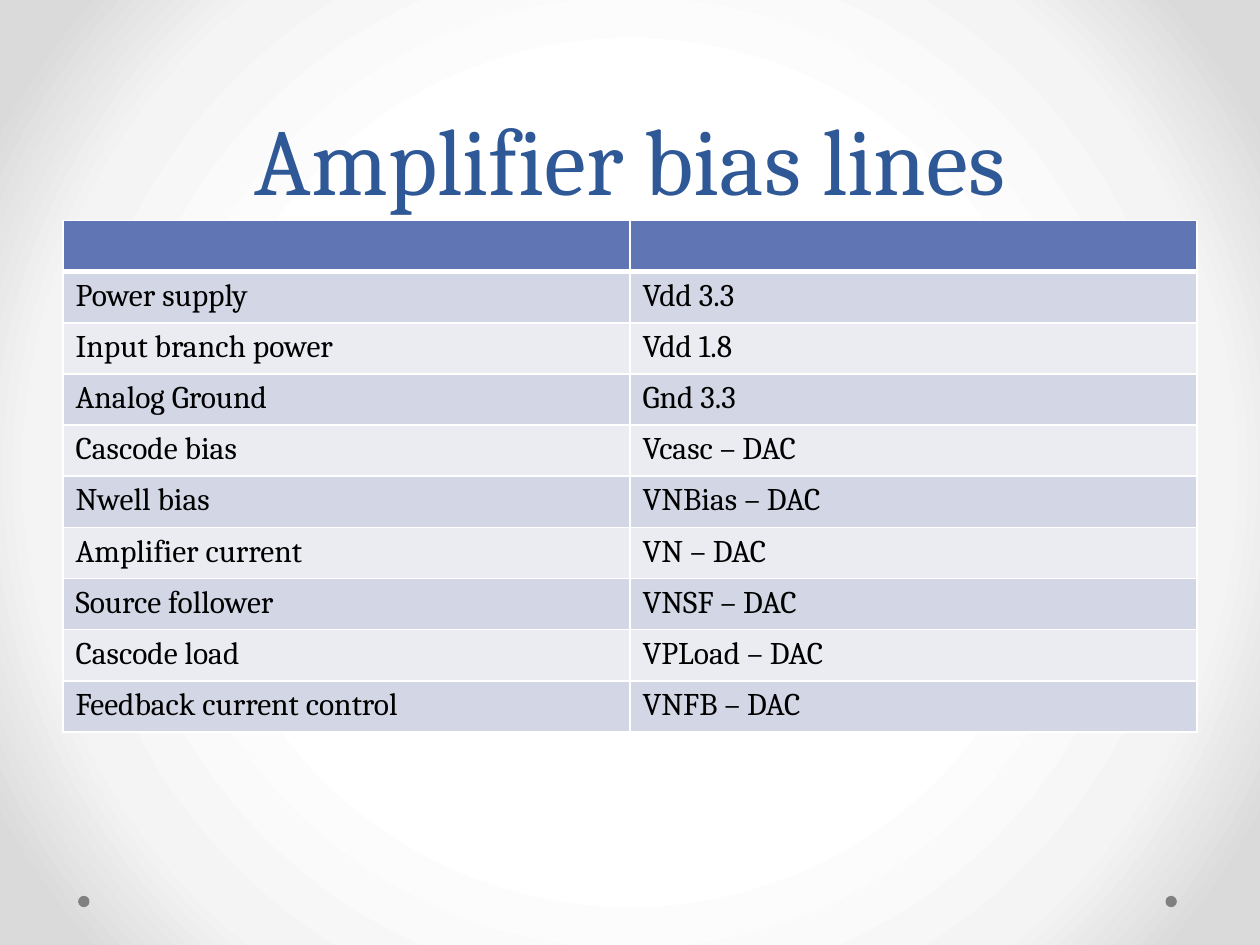
from dataclasses import dataclass

from lxml import etree
from pptx import Presentation
from pptx.dml.color import RGBColor
from pptx.enum.shapes import MSO_SHAPE
from pptx.enum.text import MSO_ANCHOR, PP_ALIGN
from pptx.oxml import parse_xml
from pptx.oxml.ns import nsdecls, qn
from pptx.util import Inches, Pt

DOT = MSO_SHAPE.OVAL
BOTTOM = MSO_ANCHOR.BOTTOM
CENTER = PP_ALIGN.CENTER
TITLE_ONLY = 5


@dataclass(frozen=True)
class Theme:
    font: str = "Cambria"
    title_size: int = 54
    title_leading: int = 58
    body_size: int = 18
    title: str = "2F5897"
    text: str = "000000"
    header: str = "6076B4"
    bands: tuple = ("D2D6E5", "EAECF2")
    rule: str = "FFFFFF"
    dot: str = "808080"
    glow: tuple = ((50, "FFFFFF"), (76, "F4F4F4"), (92, "DADADA"))


def write(frame, text, *, font, size, color, align=None, leading=None):
    paragraph = frame.paragraphs[0]
    paragraph.text = text
    paragraph.alignment = align
    if leading:
        paragraph.line_spacing = Pt(leading)
    paragraph.font.name = font
    paragraph.font.size = Pt(size)
    paragraph.font.color.rgb = RGBColor.from_string(color)


class Deck:
    def __init__(self, theme):
        self.theme = theme
        self.presentation = Presentation()
        self.presentation.slide_width = Inches(10)
        self.presentation.slide_height = Inches(7.5)
        layout = self.presentation.slide_layouts[TITLE_ONLY]
        self.slide = self.presentation.slides.add_slide(layout)

    def place(self, left, top, width, height):
        across = self.presentation.slide_width
        down = self.presentation.slide_height
        return (round(left * across), round(top * down),
                round(width * across), round(height * down))

    def background(self):
        self.slide.background.fill.gradient()
        gradient = self.slide.element.find(".//" + qn("a:gradFill"))
        for part in list(gradient):
            gradient.remove(part)
        stops = etree.SubElement(gradient, qn("a:gsLst"))
        for share, color in self.theme.glow:
            stop = etree.SubElement(stops, qn("a:gs"), pos=str(share * 1000))
            etree.SubElement(stop, qn("a:srgbClr"), val=color)
        circle = etree.SubElement(gradient, qn("a:path"), path="circle")
        etree.SubElement(circle, qn("a:fillToRect"),
                         l="50000", t="50000", r="50000", b="50000")

    def dot(self, left, top, diameter):
        across, down, size, _ = self.place(left, top, diameter, diameter)
        dot = self.slide.shapes.add_shape(DOT, across, down, size, size)
        dot.shadow.inherit = False
        dot.fill.solid()
        dot.fill.fore_color.rgb = RGBColor.from_string(self.theme.dot)
        dot.line.fill.background()

    def title(self, text, *area):
        heading = self.slide.shapes.title
        heading.left, heading.top, heading.width, heading.height = self.place(*area)
        heading.text_frame.vertical_anchor = BOTTOM
        write(heading.text_frame, text, font=self.theme.font,
              size=self.theme.title_size, color=self.theme.title,
              align=CENTER, leading=self.theme.title_leading)

    def border(self, cell, bottom):
        properties = cell._tc.get_or_add_tcPr()
        for side, points in (("L", 1), ("R", 1), ("T", 1), ("B", bottom)):
            properties.append(parse_xml(
                f'<a:ln{side} {nsdecls("a")} w="{Pt(points)}"><a:solidFill>'
                f'<a:srgbClr val="{self.theme.rule}"/></a:solidFill></a:ln{side}>'))

    def table(self, rows, *area):
        left, top, width, height = self.place(*area)
        grid = self.slide.shapes.add_table(
            len(rows), len(rows[0]), left, top, width, height).table
        for r, row in enumerate(rows):
            color = self.theme.bands[(r - 1) % 2] if r else self.theme.header
            for c, text in enumerate(row):
                cell = grid.cell(r, c)
                self.border(cell, bottom=1 if r else 3)
                cell.fill.solid()
                cell.fill.fore_color.rgb = RGBColor.from_string(color)
                write(cell.text_frame, text, font=self.theme.font,
                      size=self.theme.body_size, color=self.theme.text)


BIAS_LINES = [
    ("", ""),
    ("Power supply", "Vdd 3.3"),
    ("Input branch power", "Vdd 1.8"),
    ("Analog Ground", "Gnd 3.3"),
    ("Cascode bias", "Vcasc – DAC"),
    ("Nwell bias", "VNBias – DAC"),
    ("Amplifier current", "VN – DAC"),
    ("Source follower", "VNSF – DAC"),
    ("Cascode load", "VPLoad – DAC"),
    ("Feedback current control", "VNFB – DAC"),
]


def main():
    deck = Deck(Theme())
    deck.background()
    margin, title_height = 0.05, 1.75 / 7.5
    for left in (0.925, 0.062):
        deck.dot(left, 7.11 / 7.5, 0.009)
    deck.title("Amplifier bias lines", margin, 0, 1 - 2 * margin, title_height)
    deck.table(BIAS_LINES, margin, title_height, 1 - 2 * margin, 4.06 / 7.5)
    deck.presentation.save("out.pptx")


if __name__ == "__main__":
    main()
